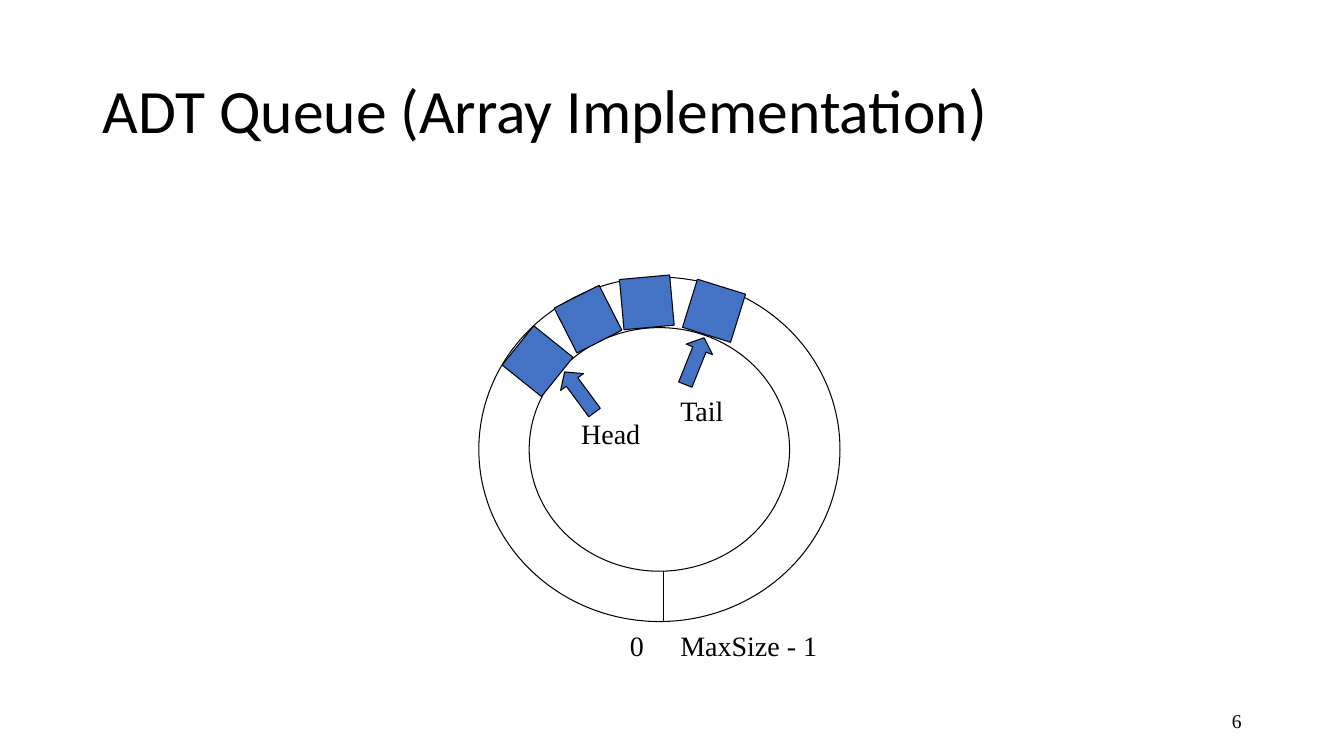
from dataclasses import dataclass

from lxml import etree
from pptx import Presentation
from pptx.dml.color import RGBColor
from pptx.enum.shapes import MSO_CONNECTOR, MSO_SHAPE
from pptx.enum.text import MSO_ANCHOR, MSO_AUTO_SIZE, PP_ALIGN
from pptx.oxml.ns import qn
from pptx.util import Inches, Pt

OVAL, SQUARE, ARROW = MSO_SHAPE.OVAL, MSO_SHAPE.RECTANGLE, MSO_SHAPE.LEFT_ARROW
STRAIGHT = MSO_CONNECTOR.STRAIGHT
LEFT, RIGHT = PP_ALIGN.LEFT, PP_ALIGN.RIGHT
MIDDLE, TOP = MSO_ANCHOR.MIDDLE, MSO_ANCHOR.TOP
FIT_SHAPE, NO_FIT = MSO_AUTO_SIZE.SHAPE_TO_FIT_TEXT, MSO_AUTO_SIZE.NONE

COLUMNS, ROWS = 160, 90
UNIT = Inches(13.33) / COLUMNS
RING_COLUMN, RING_ROW = 78.5, 53.5
SLOT = 6


@dataclass(frozen=True)
class Theme:
    ink: RGBColor = RGBColor(0x00, 0x00, 0x00)
    filled: RGBColor = RGBColor(0x44, 0x72, 0xC4)
    title_font: str = "Calibri"
    label_font: str = "Times New Roman"
    title_size: int = 44
    label_size: int = 20
    number_size: int = 14
    line_width: float = 0.75


THEME = Theme()


def grid(*cells):
    """Turn grid columns and rows into slide lengths."""
    return [round(cell * UNIT) for cell in cells]


def format_text(text_frame, font_name, size, alignment=LEFT, anchor=TOP):
    text_frame.vertical_anchor = anchor
    paragraph = text_frame.paragraphs[0]
    paragraph.alignment = alignment
    for run in paragraph.runs:
        run.font.name = font_name
        run.font.size = Pt(size)
        run.font.color.rgb = THEME.ink


def outline(line):
    line.color.rgb = THEME.ink
    line.width = Pt(THEME.line_width)


def set_title(slide, text):
    title = slide.shapes.title
    title.left, title.top, title.width, title.height = grid(11, 4.8, 138, 17.4)
    title.text_frame.text = text
    title.text_frame.auto_size = NO_FIT
    title.text_frame.paragraphs[0].line_spacing = 0.9
    format_text(title.text_frame, THEME.title_font, THEME.title_size, anchor=MIDDLE)


def add_figure(slide, kind, box, rotation=0, filled=True):
    shape = slide.shapes.add_shape(kind, *grid(*box))
    shape.shadow.inherit = False
    shape.rotation = rotation
    if filled:
        shape.fill.solid()
        shape.fill.fore_color.rgb = THEME.filled
    else:
        shape.fill.background()
    outline(shape.line)
    return shape


def add_ring_edge(slide, width, height):
    """Draw an unfilled ellipse around the centre of the ring."""
    box = (RING_COLUMN - width / 2, RING_ROW - height / 2, width, height)
    add_figure(slide, OVAL, box, filled=False)


def add_pointer(slide, column, row, rotation):
    arrow = add_figure(slide, ARROW, (column, row, SLOT, 3.4), rotation)
    arrow.adjustments[0] = 0.5
    arrow.adjustments[1] = 0.44


def add_divider(slide, column, top, bottom):
    divider = slide.shapes.add_connector(STRAIGHT, *grid(column, top, column, bottom))
    outline(divider.line)
    etree.SubElement(divider._element.spPr, qn("a:effectLst"))


def add_label(slide, text, column, row, width):
    label = slide.shapes.add_textbox(*grid(column, row, width, 5.2))
    label.text_frame.text = text
    label.text_frame.word_wrap = False
    label.text_frame.auto_size = FIT_SHAPE
    format_text(label.text_frame, THEME.label_font, THEME.label_size)


def add_page_number(slide, number):
    box = slide.shapes.add_textbox(*grid(113, 83.4, 36, 4.8))
    box.text_frame.text = number
    box.text_frame.word_wrap = True
    format_text(box.text_frame, THEME.label_font, THEME.number_size, RIGHT, MIDDLE)


def main():
    presentation = Presentation()
    presentation.slide_width, presentation.slide_height = grid(COLUMNS, ROWS)
    slide = presentation.slides.add_slide(presentation.slide_layouts[5])

    add_page_number(slide, "6")
    set_title(slide, "ADT Queue (Array Implementation)")

    inner_width, inner_height = 31, 29
    add_ring_edge(slide, inner_width, inner_height)
    add_ring_edge(slide, inner_width + 2 * SLOT, inner_height + 2 * SLOT)

    for column, row, rotation in (
        (61, 40, 38.8),
        (67, 35, 63.1),
        (74, 33, 84.8),
        (82, 34, 17.3),
    ):
        add_figure(slide, SQUARE, (column, row, SLOT, SLOT), rotation)

    inner_bottom = RING_ROW + inner_height / 2
    add_divider(slide, 79, inner_bottom, inner_bottom + SLOT)

    for text, column, row, width in (
        ("0", 73.8, 74.2, 4.1),
        ("MaxSize - 1", 79.8, 74.2, 18.7),
        ("Head", 68, 49, 9.5),
        ("Tail", 79.8, 46.2, 7.8),
    ):
        add_label(slide, text, column, row, width)

    add_pointer(slide, 66, 45, 53.6)
    add_pointer(slide, 79.7, 41.3, 111.8)

    presentation.save("out.pptx")


if __name__ == "__main__":
    main()
